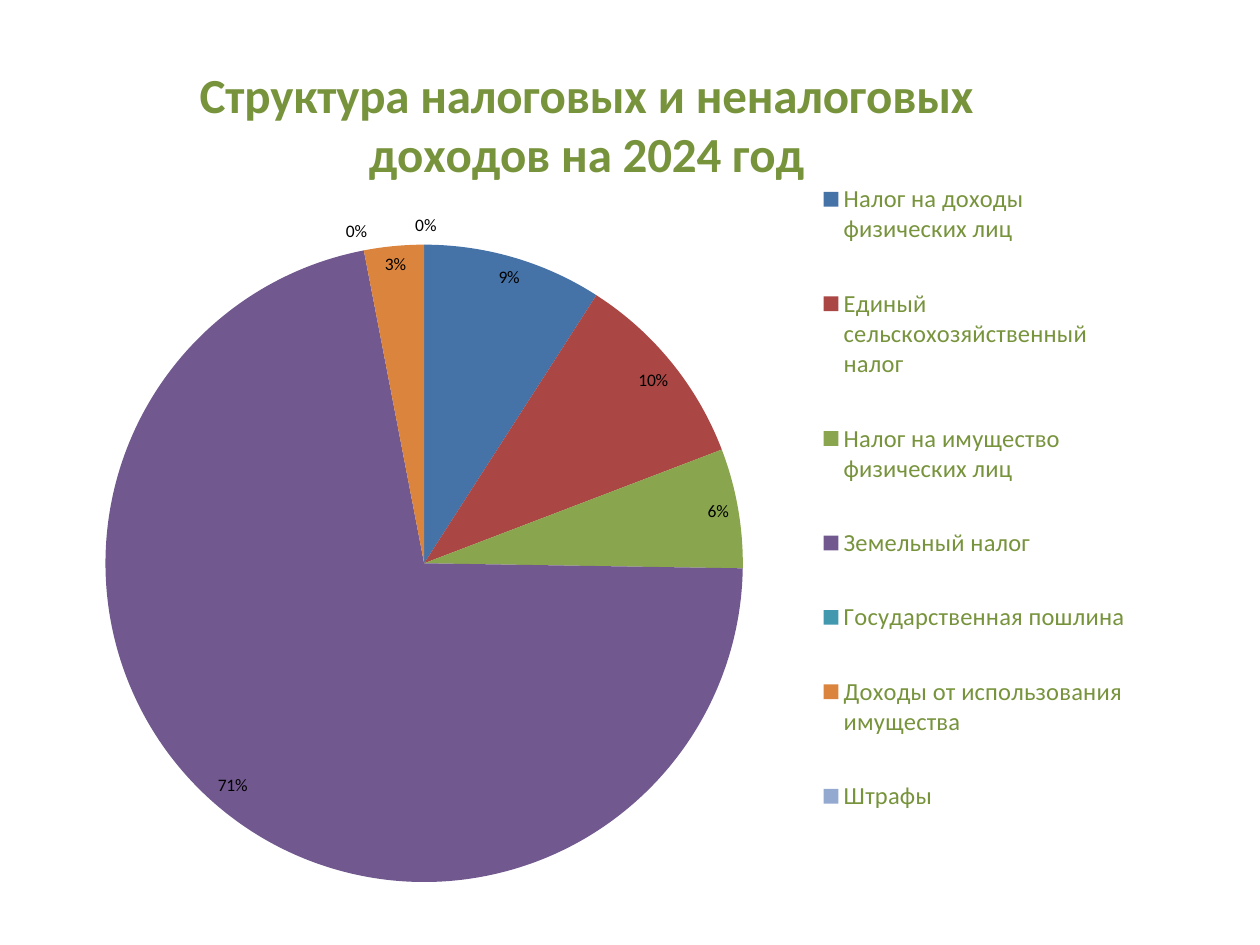
from lxml.etree import SubElement
from pptx import Presentation
from pptx.chart.data import CategoryChartData
from pptx.dml.color import RGBColor
from pptx.enum.chart import XL_CHART_TYPE, XL_LABEL_POSITION, XL_LEGEND_POSITION
from pptx.enum.text import MSO_ANCHOR, PP_ALIGN
from pptx.oxml.ns import qn
from pptx.util import Inches, Pt

FONT = "Calibri"
GREEN = RGBColor(0x77, 0x93, 0x3C)
BLACK = RGBColor(0x00, 0x00, 0x00)
TITLE = "Структура налоговых и неналоговых доходов на 2024 год"
INCOME = [
    ("Налог на доходы физических лиц", 9, RGBColor(0x45, 0x72, 0xA7)),
    ("Единый сельскохозяйственный налог", 10, RGBColor(0xAA, 0x46, 0x43)),
    ("Налог на имущество физических лиц", 6, RGBColor(0x89, 0xA5, 0x4E)),
    ("Земельный налог", 71, RGBColor(0x71, 0x58, 0x8F)),
    ("Государственная пошлина", 0, RGBColor(0x41, 0x98, 0xAF)),
    ("Доходы от использования имущества", 3, RGBColor(0xDB, 0x84, 0x3D)),
    ("Штрафы", 0, RGBColor(0x93, 0xA9, 0xCF)),
]
ZERO_SHARE_CENTERS = [(2.83, 1.83), (3.38, 1.78)]


def style_font(font, size, color, bold=False):
    """Set typeface, size, colour and weight."""
    font.name = FONT
    font.size = Pt(size)
    font.color.rgb = color
    font.bold = bold


def place(part, inner=False, **fractions):
    """Fix a chart part at fractions of the chart area."""
    layout = part.find(qn("c:layout"))
    if layout is None:
        layout = SubElement(part, qn("c:layout"))
        if part.tag == qn("c:plotArea"):
            part.insert(0, layout)
        else:
            part[0].addnext(layout)
    for child in list(layout):
        layout.remove(child)
    manual = SubElement(layout, qn("c:manualLayout"))
    if inner:
        SubElement(manual, qn("c:layoutTarget"), val="inner")
    for axis in ("x", "y"):
        SubElement(manual, qn(f"c:{axis}Mode"), val="edge")
    for key, value in fractions.items():
        SubElement(manual, qn(f"c:{key}"), val=str(value))


def add_income_pie(slide):
    """Add the pie of income shares."""
    shares = CategoryChartData()
    shares.categories = [name for name, _, _ in INCOME]
    shares.add_series(TITLE, [share for _, share, _ in INCOME])
    chart = slide.shapes.add_chart(
        XL_CHART_TYPE.PIE, Inches(0.28), Inches(0.21), Inches(8.82), Inches(6.93), shares
    ).chart
    style_font(chart.font, 10, BLACK)
    plot = chart.plots[0]
    plot.vary_by_categories = True
    for index, (_, _, color) in enumerate(INCOME):
        fill = plot.series[0].points[index].format.fill
        fill.solid()
        fill.fore_color.rgb = color
    place(chart.element.chart.plotArea, inner=True, x=0.06, y=0.25, w=0.58, h=0.73)
    return chart


def add_title(chart):
    """Write the heading above the pie."""
    chart.has_title = True
    heading = chart.chart_title.text_frame.paragraphs[0].add_run()
    heading.text = TITLE
    style_font(heading.font, 28, GREEN, bold=True)
    chart.chart_title.include_in_layout = False
    place(chart.element.chart.find(qn("c:title")), x=0.14, y=0.03)


def add_legend(chart):
    """List the kinds of income on the right."""
    chart.has_legend = True
    legend = chart.legend
    legend.position = XL_LEGEND_POSITION.RIGHT
    legend.include_in_layout = False
    style_font(legend.font, 14, GREEN)
    place(chart.element.chart.find(qn("c:legend")), x=0.7, y=0.13, w=0.29, h=0.82)


def add_share_labels(chart):
    """Label each slice with its share."""
    labels = chart.plots[0].series[0].data_labels
    labels.show_value = True
    labels.number_format = '0"%"'
    labels.number_format_is_linked = False
    labels.position = XL_LABEL_POSITION.BEST_FIT
    style_font(labels.font, 10, BLACK)


def add_zero_share(slide, center_x, center_y):
    """Write the label of a share too small to draw."""
    width, height = 0.4, 0.2
    frame = slide.shapes.add_textbox(
        Inches(center_x - width / 2), Inches(center_y - height / 2), Inches(width), Inches(height)
    ).text_frame
    frame.word_wrap = True
    frame.vertical_anchor = MSO_ANCHOR.MIDDLE
    frame.margin_left = frame.margin_right = frame.margin_top = frame.margin_bottom = 0
    paragraph = frame.paragraphs[0]
    paragraph.alignment = PP_ALIGN.CENTER
    share = paragraph.add_run()
    share.text = "0%"
    style_font(share.font, 10, BLACK)


def main():
    """Build the slide and save it."""
    presentation = Presentation()
    presentation.slide_width = Inches(10)
    presentation.slide_height = Inches(7.5)
    slide = presentation.slides.add_slide(presentation.slide_layouts[6])
    chart = add_income_pie(slide)
    add_title(chart)
    add_legend(chart)
    add_share_labels(chart)
    for center_x, center_y in ZERO_SHARE_CENTERS:
        add_zero_share(slide, center_x, center_y)
    presentation.save("out.pptx")


if __name__ == "__main__":
    main()
